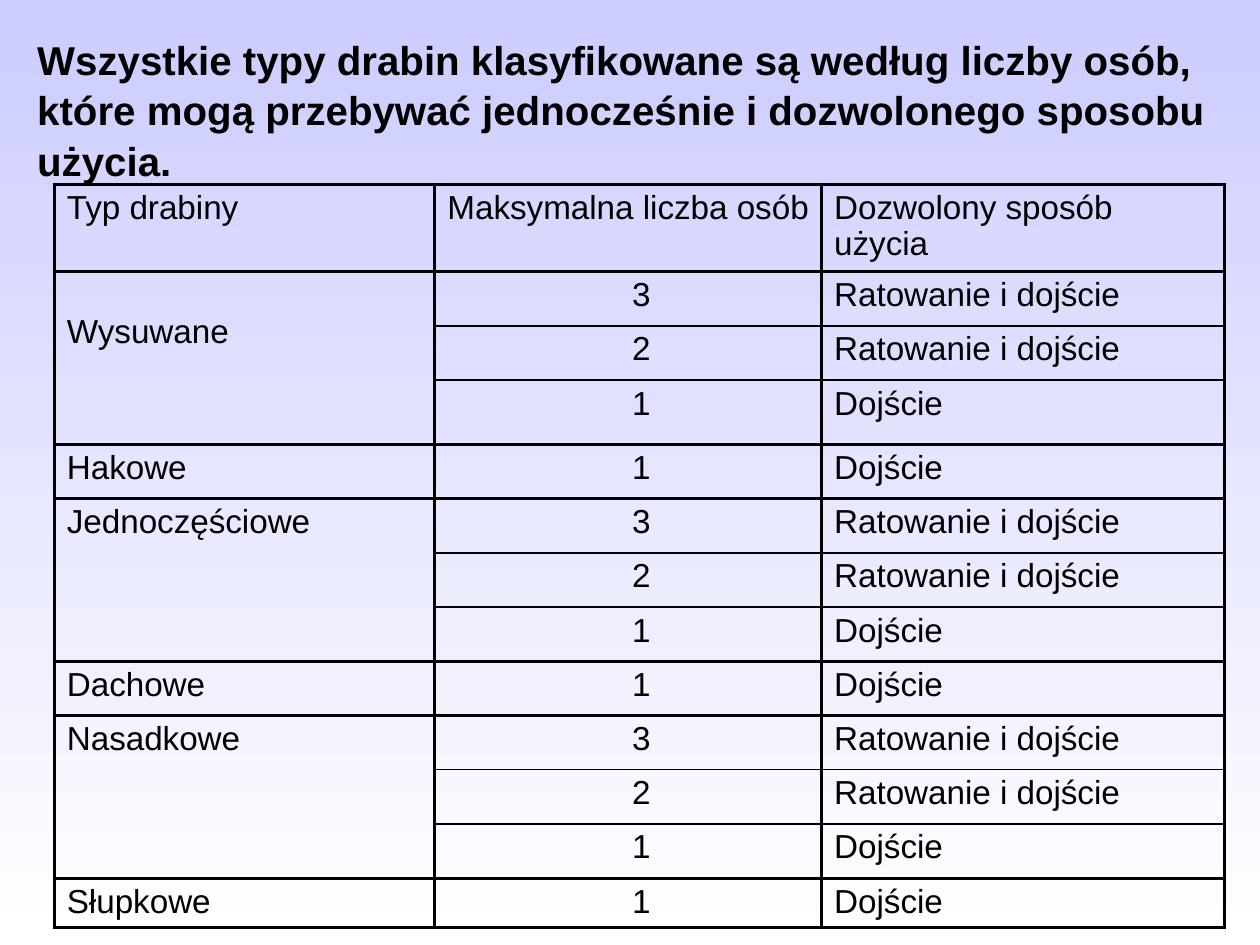
import pptx
import pptx.dml.color
import pptx.enum.text
import pptx.oxml
import pptx.oxml.ns
import pptx.util

Pt = pptx.util.Pt
ALIGN = pptx.enum.text.PP_ALIGN
COLORS = {"ink": "000000", "sky": "CCCCFF", "ground": "FFFFFF"}
FONT = "Arial"

TITLE = ("Wszystkie typy drabin klasyfikowane są według liczby osób, "
         "które mogą przebywać jednocześnie i dozwolonego sposobu użycia.")
HEADINGS = ["Typ drabiny", "Maksymalna liczba osób", "Dozwolony sposób użycia"]
LADDERS = {"Wysuwane": 3, "Hakowe": 1, "Jednoczęściowe": 3,
           "Dachowe": 1, "Nasadkowe": 3, "Słupkowe": 1}
USES = {3: "Ratowanie i dojście", 2: "Ratowanie i dojście", 1: "Dojście"}

COLUMN_WIDTHS = [217.5, 221, 230.5]
ROW_HEIGHTS = [49.7, 31, 31, 36.7] + [31] * 8 + [28]
THICK, THIN = 2, 1
LINE_HEIGHT = 21.1
COUNT_INDENT = 112.8


def rgb(name):
    return pptx.dml.color.RGBColor.from_string(COLORS[name])


def style_paragraph(para, size, spacing, bold=False):
    para.font.name = FONT
    para.font.size = Pt(size)
    para.font.bold = bold
    para.font.color.rgb = rgb("ink")
    para.line_spacing = spacing


def paint_background(page):
    fill = page.background.fill
    fill.gradient()
    fill.gradient_angle = 270
    for stop, name, position in zip(fill.gradient_stops, ("sky", "ground"), (0, 1)):
        stop.color.rgb = rgb(name)
        stop.position = position


def add_title(page, left, top, width, height):
    box = page.shapes.add_textbox(Pt(left), Pt(top), Pt(width), Pt(height))
    box.text_frame.word_wrap = True
    para = box.text_frame.paragraphs[0]
    para.text = TITLE
    style_paragraph(para, 23, 1.05, bold=True)


def set_borders(cell, top, bottom):
    """Draw thick sides, with the given widths above and below."""
    properties = cell._tc.get_or_add_tcPr()
    edges = {"lnL": THICK, "lnR": THICK, "lnT": top, "lnB": bottom}
    for index, (edge, width) in enumerate(edges.items()):
        line = pptx.oxml.parse_xml(
            f'<a:{edge} {pptx.oxml.ns.nsdecls("a")} w="{Pt(width)}"><a:solidFill>'
            f'<a:srgbClr val="{COLORS["ink"]}"/></a:solidFill></a:{edge}>')
        properties.insert(index, line)


def fill_cell(cell, text, top=THICK, bottom=THICK):
    cell.text = text
    style_paragraph(cell.text_frame.paragraphs[0], 19, 0.97)
    cell.fill.background()
    set_borders(cell, top, bottom)


def add_ladder_table(page, left, top):
    frame = page.shapes.add_table(
        len(ROW_HEIGHTS), len(COLUMN_WIDTHS), Pt(left), Pt(top),
        Pt(sum(COLUMN_WIDTHS)), Pt(sum(ROW_HEIGHTS)))
    table = frame.table
    table.first_row = table.horz_banding = False
    for column, width in zip(table.columns, COLUMN_WIDTHS):
        column.width = Pt(width)
    for row, height in zip(table.rows, ROW_HEIGHTS):
        row.height = Pt(height)

    for column, heading in enumerate(HEADINGS):
        fill_cell(table.cell(0, column), heading)
    table.cell(0, 1).text_frame.paragraphs[0].alignment = ALIGN.CENTER

    first = 1
    for ladder, most in LADDERS.items():
        for offset, count in enumerate(range(most, 0, -1)):
            row = first + offset
            upper = THICK if count == most else THIN
            lower = THICK if count == 1 else THIN
            fill_cell(table.cell(row, 0), ladder if offset == 0 else "")
            fill_cell(table.cell(row, 1), str(count), upper, lower)
            table.cell(row, 1).margin_left = Pt(COUNT_INDENT)
            fill_cell(table.cell(row, 2), USES[count], upper, lower)
        if most > 1:
            table.cell(first, 0).merge(table.cell(first + most - 1, 0))
        first += most
    # The first ladder type sits one line lower than the others.
    table.cell(1, 0).margin_top = Pt(3.6 + LINE_HEIGHT)


def main():
    deck = pptx.Presentation()
    deck.slide_width, deck.slide_height = Pt(720), Pt(540)
    page = deck.slides.add_slide(deck.slide_layouts[6])
    paint_background(page)
    add_ladder_table(page, 31, 105.6)
    add_title(page, 14.2, 15, 692, 90)
    deck.save("out.pptx")


if __name__ == "__main__":
    main()
